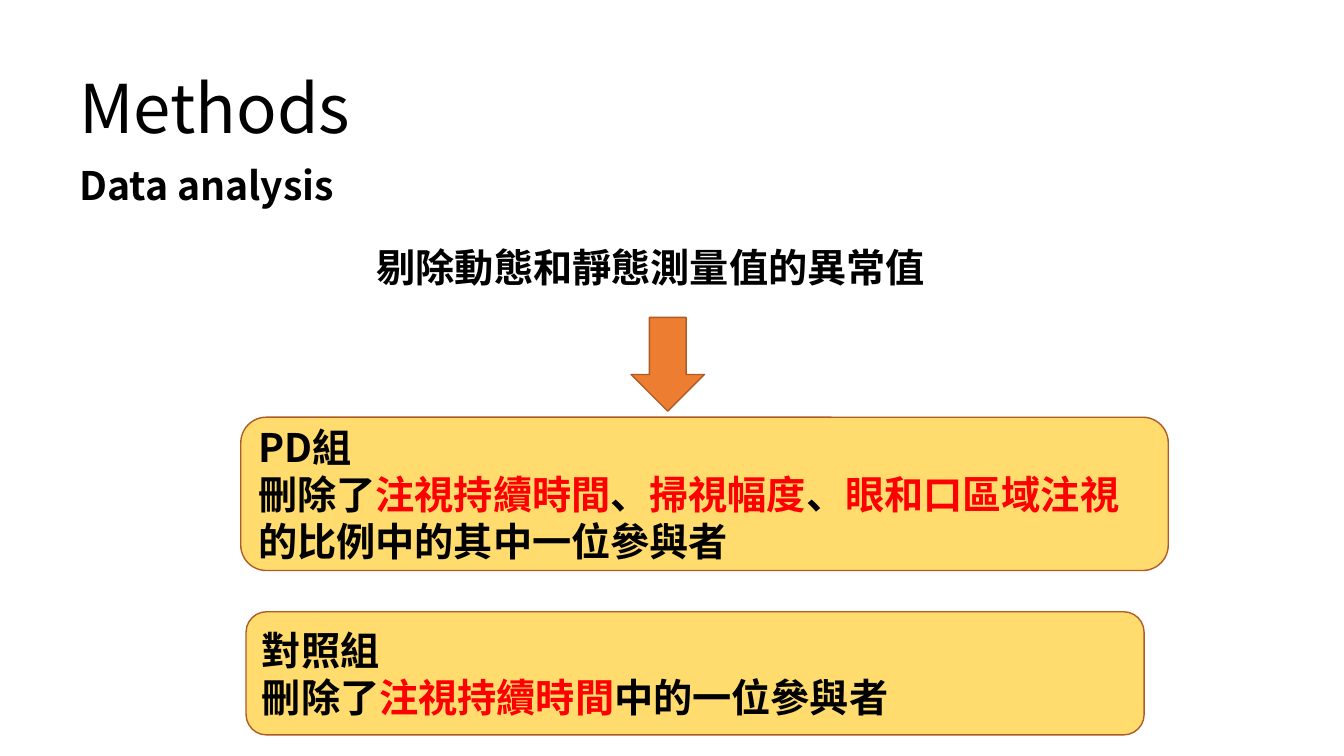
from dataclasses import dataclass

import pptx
import pptx.dml.color
import pptx.enum.shapes
import pptx.enum.text
import pptx.oxml
import pptx.oxml.ns
import pptx.util

Pt = pptx.util.Pt
RGBColor = pptx.dml.color.RGBColor
MSO_SHAPE = pptx.enum.shapes.MSO_SHAPE
MSO_ANCHOR = pptx.enum.text.MSO_ANCHOR

BLACK = RGBColor(0x00, 0x00, 0x00)
RED = RGBColor(0xFF, 0x00, 0x00)
YELLOW = RGBColor(0xFF, 0xDC, 0x6D)
ORANGE = RGBColor(0xED, 0x7D, 0x31)
BROWN = RGBColor(0xAF, 0x5C, 0x24)
FONT = "Noto Sans CJK SC"


@dataclass
class Box:
    left: float
    top: float
    width: float
    height: float

    def lengths(self) -> tuple:
        return tuple(Pt(v) for v in (self.left, self.top, self.width, self.height))


@dataclass
class Label:
    box: Box
    text: str


@dataclass
class Group:
    box: Box
    name: str
    pieces: list[tuple[str, RGBColor]]


LABELS = [
    Label(Box(262, 170.5, 425.5, 41), "剔除動態和靜態測量值的異常值"),
    Label(Box(49.5, 111.5, 233.5, 41), "Data analysis"),
]
GROUPS = [
    Group(Box(172, 298, 662.5, 109.5), "PD組", [
        ("刪除了", BLACK), ("注視持續時間", RED), ("、", BLACK),
        ("掃視幅度", RED), ("、", BLACK), ("眼和口區域注視", RED),
        ("的比例中的其中一位參與者", BLACK),
    ]),
    Group(Box(175.75, 437, 641.5, 88), "對照組", [
        ("刪除了", BLACK), ("注視持續時間", RED), ("中的一位參與者", BLACK),
    ]),
]


def format_run(r, size: float = 28, bold: bool = True, color: RGBColor = BLACK) -> None:
    r.font.name = FONT
    r.font.size = Pt(size)
    r.font.bold = bold
    r.font.color.rgb = color
    ea = pptx.oxml.parse_xml(f'<a:ea {pptx.oxml.ns.nsdecls("a")} typeface="{FONT}"/>')
    r.font._element.find(pptx.oxml.ns.qn("a:latin")).addnext(ea)


def format_paragraph(p) -> None:
    p.alignment = pptx.enum.text.PP_ALIGN.LEFT
    p.line_spacing = 1.0


def add_title(s, text: str, box: Box) -> None:
    sp = s.shapes.title
    sp.left, sp.top, sp.width, sp.height = box.lengths()
    tf = sp.text_frame
    tf.text = text
    tf.auto_size = pptx.enum.text.MSO_AUTO_SIZE.NONE
    tf.vertical_anchor = MSO_ANCHOR.TOP
    format_paragraph(tf.paragraphs[0])
    format_run(tf.paragraphs[0].runs[0], size=48, bold=False)


def add_label(s, label: Label) -> None:
    tf = s.shapes.add_textbox(*label.box.lengths()).text_frame
    tf.word_wrap = True
    tf.text = label.text
    format_paragraph(tf.paragraphs[0])
    format_run(tf.paragraphs[0].runs[0])


def add_panel(s, kind: MSO_SHAPE, box: Box, fill: RGBColor):
    sp = s.shapes.add_shape(kind, *box.lengths())
    sp.shadow.inherit = False
    sp.fill.solid()
    sp.fill.fore_color.rgb = fill
    sp.line.color.rgb = BROWN
    sp.line.width = Pt(1)
    return sp


def add_group(s, group: Group) -> None:
    tf = add_panel(s, MSO_SHAPE.ROUNDED_RECTANGLE, group.box, YELLOW).text_frame
    tf.word_wrap = True
    tf.vertical_anchor = MSO_ANCHOR.MIDDLE
    tf.text = group.name
    format_run(tf.paragraphs[0].runs[0])
    p = tf.add_paragraph()
    for text, color in group.pieces:
        r = p.add_run()
        r.text = text
        format_run(r, color=color)
    for p in tf.paragraphs:
        format_paragraph(p)


def main() -> None:
    prs = pptx.Presentation()
    prs.slide_width, prs.slide_height = Pt(960), Pt(540)
    s = prs.slides.add_slide(prs.slide_layouts[5])
    add_title(s, "Methods", Box(49.5, 44, 1029.5, 65.5))
    for label in LABELS:
        add_label(s, label)
    add_panel(s, MSO_SHAPE.DOWN_ARROW, Box(450.75, 226.75, 52.5, 67), ORANGE)
    for group in GROUPS:
        add_group(s, group)
    prs.save("out.pptx")


if __name__ == "__main__":
    main()
